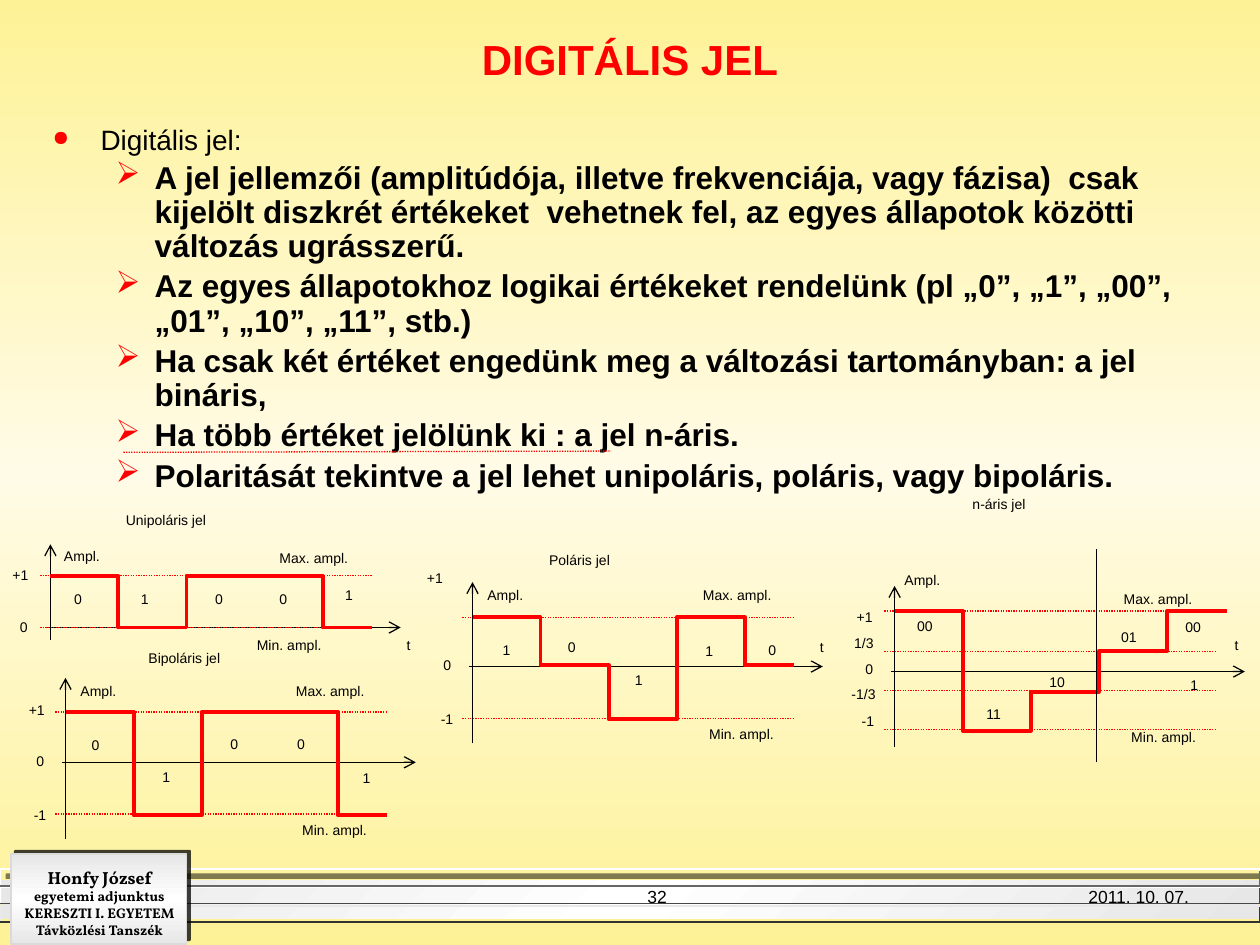
from copy import deepcopy

from lxml.etree import SubElement
from pptx import Presentation
from pptx.dml.color import RGBColor
from pptx.enum.dml import MSO_LINE
from pptx.enum.shapes import MSO_CONNECTOR, MSO_SHAPE
from pptx.enum.text import MSO_ANCHOR, PP_ALIGN
from pptx.oxml.ns import qn
from pptx.util import Inches, Pt

WIDTH, HEIGHT = 10, 7.5
TITLE_ONLY = 5
RED, BLACK, WHITE = "FF0000", "000000", "FFFFFF"
CREAM, SILVER = "FEF296", "E7E7E7"
STEP = 0.54  # width of one bit

# Labels are (text, distance from the amplitude axis, top).
SIGNALS = [
    dict(left=0.4, top=4.32, zero=4.98, bottom=5.08, span=2.55,
         levels=[4.57, 4.98, 4.57, 4.57, 4.98], guides=[4.57, 4.98],
         labels=[("Unipoláris jel", 0.5, 4.01), ("Ampl.", 0.01, 4.3),
                 ("Max. ampl.", 1.72, 4.31), ("Min. ampl.", 1.54, 5),
                 ("t", 2.73, 5), ("+1", -0.4, 4.45), ("0", -0.34, 4.86),
                 ("0", 0.09, 4.64), ("1", 0.62, 4.64), ("0", 1.21, 4.64),
                 ("0", 1.72, 4.64), ("1", 2.24, 4.61)]),
    dict(left=0.52, top=5.38, zero=6.05, bottom=6.66, span=2.55,
         levels=[5.65, 6.47, 5.65, 5.65, 6.47], guides=[5.65, 6.46],
         labels=[("Bipoláris jel", 0.56, 5.11), ("Ampl.", 0.02, 5.37),
                 ("Max. ampl.", 1.73, 5.37), ("Min. ampl.", 1.78, 6.47),
                 ("+1", -0.39, 5.52), ("0", -0.33, 5.92), ("-1", -0.35, 6.35),
                 ("0", 0.11, 5.8), ("1", 0.67, 6.05), ("0", 1.21, 5.79),
                 ("0", 1.74, 5.79), ("1", 2.26, 6.06)]),
    dict(left=3.75, top=4.62, zero=5.29, bottom=5.9, span=2.55,
         levels=[4.9, 5.28, 5.71, 4.9, 5.28], guides=[4.9, 5.7],
         labels=[("Poláris jel", 0.51, 4.33), ("Ampl.", 0.02, 4.61),
                 ("Max. ampl.", 1.73, 4.61), ("Min. ampl.", 1.78, 5.71),
                 ("t", 2.66, 5.02), ("+1", -0.46, 4.47), ("0", -0.33, 5.16),
                 ("-1", -0.35, 5.59), ("1", 0.14, 5.04), ("0", 0.66, 5.02),
                 ("1", 1.19, 5.28), ("1", 1.75, 5.05), ("0", 2.25, 5.04)]),
    dict(left=7.1, top=4.65, zero=5.33, bottom=5.93, span=2.64,
         levels=[4.85, 5.8, 5.49, 5.17, 4.85], guides=[4.85, 5.17, 5.48, 5.79],
         labels=[("n-áris jel", 0.52, 3.88), ("Ampl.", -0.02, 4.49),
                 ("Max. ampl.", 1.72, 4.64), ("Min. ampl.", 1.78, 5.73),
                 ("t", 2.6, 5), ("+1", -0.4, 4.78), ("1/3", -0.42, 4.99),
                 ("0", -0.33, 5.19), ("-1/3", -0.44, 5.39), ("-1", -0.36, 5.61),
                 ("00", 0.08, 4.85), ("11", 0.63, 5.55), ("10", 1.13, 5.3),
                 ("01", 1.7, 4.94), ("00", 2.21, 4.86), ("1", 2.25, 5.32)]),
]

STATEMENTS = [
    "A jel jellemzői (amplitúdója, illetve frekvenciája, vagy fázisa)  csak kijelölt "
    "diszkrét értékeket  vehetnek fel, az egyes állapotok közötti változás ugrásszerű.",
    "Az egyes állapotokhoz logikai értékeket rendelünk "
    "(pl „0”, „1”, „00”, „01”, „10”, „11”, stb.)",
    "Ha csak két értéket engedünk meg a változási tartományban: a jel bináris,",
    "Ha több értéket jelölünk ki : a jel n-áris.",
    "Polaritását tekintve a jel lehet unipoláris, poláris, vagy bipoláris.",
]


def rgb(color):
    return RGBColor.from_string(color)


def inches(*lengths):
    return [Inches(length) for length in lengths]


def write(paragraph, text, size=8, color=BLACK, bold=False, font="Arial",
          align=PP_ALIGN.LEFT):
    paragraph.alignment = align
    run = paragraph.add_run()
    run.text = text
    run.font.size = Pt(size)
    run.font.name = font
    run.font.bold = bold
    run.font.color.rgb = rgb(color)


def add_text_frame(slide, *box):
    frame = slide.shapes.add_textbox(*inches(*box)).text_frame
    frame.word_wrap = True
    return frame


def add_label(slide, text, left, top, width, height=0.23, **style):
    write(add_text_frame(slide, left, top, width, height).paragraphs[0], text, **style)


def add_line(slide, start, end, color=BLACK, dotted=False, arrow=False):
    connector = slide.shapes.add_connector(
        MSO_CONNECTOR.STRAIGHT, *inches(*start, *end))
    connector.line.color.rgb = rgb(color)
    connector.line.width = Pt(0.75)
    properties = connector.element.spPr
    if dotted:
        connector.line.dash_style = MSO_LINE.ROUND_DOT
    if arrow:
        SubElement(properties.find(qn("a:ln")), qn("a:tailEnd"), type="arrow")
    SubElement(properties, qn("a:effectLst"))


def add_polyline(slide, points, color, width):
    start, *rest = [inches(*point) for point in points]
    builder = slide.shapes.build_freeform(*start, scale=1.0)
    builder.add_line_segments(rest, close=False)
    shape = builder.convert_to_shape()
    shape.shadow.inherit = False
    shape.fill.background()
    shape.line.color.rgb = rgb(color)
    shape.line.width = Pt(width)


def set_gradient(fill, element, edge, middle, angle):
    """Fill with edge - middle - edge colours; element holds the fill's XML."""
    fill.gradient()
    fill.gradient_angle = angle
    stop_list = element.find(".//" + qn("a:gsLst"))
    stop_list.insert(1, deepcopy(stop_list[0]))
    for stop, color, position in zip(
            fill.gradient_stops, (edge, middle, edge), (0, 0.5, 1)):
        stop.color.rgb = rgb(color)
        stop.position = position


def add_metal_plate(slide, box, angle, line, distance, opacity):
    """Silver rectangle with a hard shadow to the upper right."""
    shape = slide.shapes.add_shape(MSO_SHAPE.RECTANGLE, *inches(*box))
    set_gradient(shape.fill, shape.element, SILVER, WHITE, angle)
    shape.line.color.rgb = rgb(line)
    shape.line.width = Pt(1)
    shape.shadow.inherit = False
    effects = shape.element.spPr.find(qn("a:effectLst"))
    shadow = SubElement(effects, qn("a:outerShdw"), dist=str(Pt(distance)),
                        dir=str(315 * 60000), algn="ctr", rotWithShape="0")
    color = SubElement(shadow, qn("a:srgbClr"), val=BLACK)
    SubElement(color, qn("a:alpha"), val=str(opacity * 1000))


def add_footer(slide):
    add_metal_plate(slide, (0.01, 6.98, 9.99, 0.32), 315, CREAM, 4.2, 50)
    bands = [(6.9, WHITE, "676767"), (7.04, WHITE, "474747"), (7.19, "E8E8E8", "333333")]
    for top, light, _ in bands:
        add_polyline(slide, [(0, top + 0.13), (0, top), (WIDTH, top)], light, 1)
    for top, _, dark in bands:
        add_polyline(slide, [(WIDTH, top + 0.01), (WIDTH, top + 0.13), (0, top + 0.13)],
                     dark, 1)
    add_metal_plate(slide, (0.09, 6.78, 1.39, 0.71), 270, "DADADA", 2.8, 75)
    frame = add_text_frame(slide, 0, 6.83, 1.58, 0.67)
    lines = [("Honfy József", 10), ("egyetemi adjunktus", 8),
             ("KERESZTI I. EGYETEM", 8), ("Távközlési Tanszék", 8)]
    for index, (text, size) in enumerate(lines):
        paragraph = frame.add_paragraph() if index else frame.paragraphs[0]
        write(paragraph, text, size=size, bold=True, font="Vollkorn",
              align=PP_ALIGN.CENTER)
    add_label(slide, "2011. 10. 07.", 8.54, 6.98, 1.46, 0.31, size=10)
    add_label(slide, "32", 4.84, 6.98, 0.55, 0.31, size=10, align=PP_ALIGN.RIGHT)


def set_title(slide, text):
    title = slide.shapes.title
    title.left, title.top, title.width, title.height = inches(0.75, 0.13, 8.5, 0.59)
    title.text_frame.vertical_anchor = MSO_ANCHOR.BOTTOM
    write(title.text_frame.paragraphs[0], text, size=24, color=RED, bold=True,
          align=PP_ALIGN.CENTER)


def add_bullet(paragraph, text, character, margin, hanging, scale, size, bold=False):
    write(paragraph, text, size=size, bold=bold)
    paragraph.line_spacing = 0.9
    paragraph.space_before = Pt(0.2 * size)
    properties = paragraph._p.get_or_add_pPr()
    properties.set("marL", str(Inches(margin)))
    properties.set("indent", str(-Inches(hanging)))
    color = SubElement(properties, qn("a:buClr"))
    SubElement(color, qn("a:srgbClr"), val=RED)
    SubElement(properties, qn("a:buSzPct"), val=str(scale * 1000))
    SubElement(properties, qn("a:buChar"), char=character)


def add_statements(slide):
    frame = add_text_frame(slide, 0.32, 0.95, 9.37, 3)
    add_bullet(frame.paragraphs[0], "Digitális jel:", "●", 0.38, 0.38, 75, 16)
    for statement in STATEMENTS:
        paragraph = frame.add_paragraph()
        paragraph.level = 1
        add_bullet(paragraph, statement, "➢", 0.81, 0.31, 100, 18, bold=True)


def add_signal(slide, left, top, zero, bottom, span, levels, guides, labels):
    add_line(slide, (left, bottom), (left, top), arrow=True)
    add_line(slide, (left - 0.03, zero), (left + 2.78, zero), arrow=True)
    for guide in guides:
        add_line(slide, (left - 0.08, guide), (left + 2.55, guide), RED, dotted=True)
    edges = [left + STEP * index for index in range(len(levels))] + [left + span]
    wave = [(x, level) for index, level in enumerate(levels)
            for x in edges[index:index + 2]]
    add_polyline(slide, wave, RED, 2.25)
    for text, offset, label_top in labels:
        width = min(0.96, 0.21 + 0.09 * len(text))
        add_label(slide, text, left + offset, label_top, width)


def main():
    presentation = Presentation()
    presentation.slide_width, presentation.slide_height = inches(WIDTH, HEIGHT)
    slide = presentation.slides.add_slide(presentation.slide_layouts[TITLE_ONLY])
    set_gradient(slide.background.fill, slide.element, CREAM, "FFFBE6", 270)
    add_footer(slide)
    set_title(slide, "DIGITÁLIS JEL")
    add_statements(slide)
    add_line(slide, (0.98, 3.59), (4.85, 3.58), RED, dotted=True)
    for signal in SIGNALS:
        add_signal(slide, **signal)
    add_line(slide, (8.7, 4.36), (8.7, 6.05))
    presentation.save("out.pptx")


if __name__ == "__main__":
    main()
